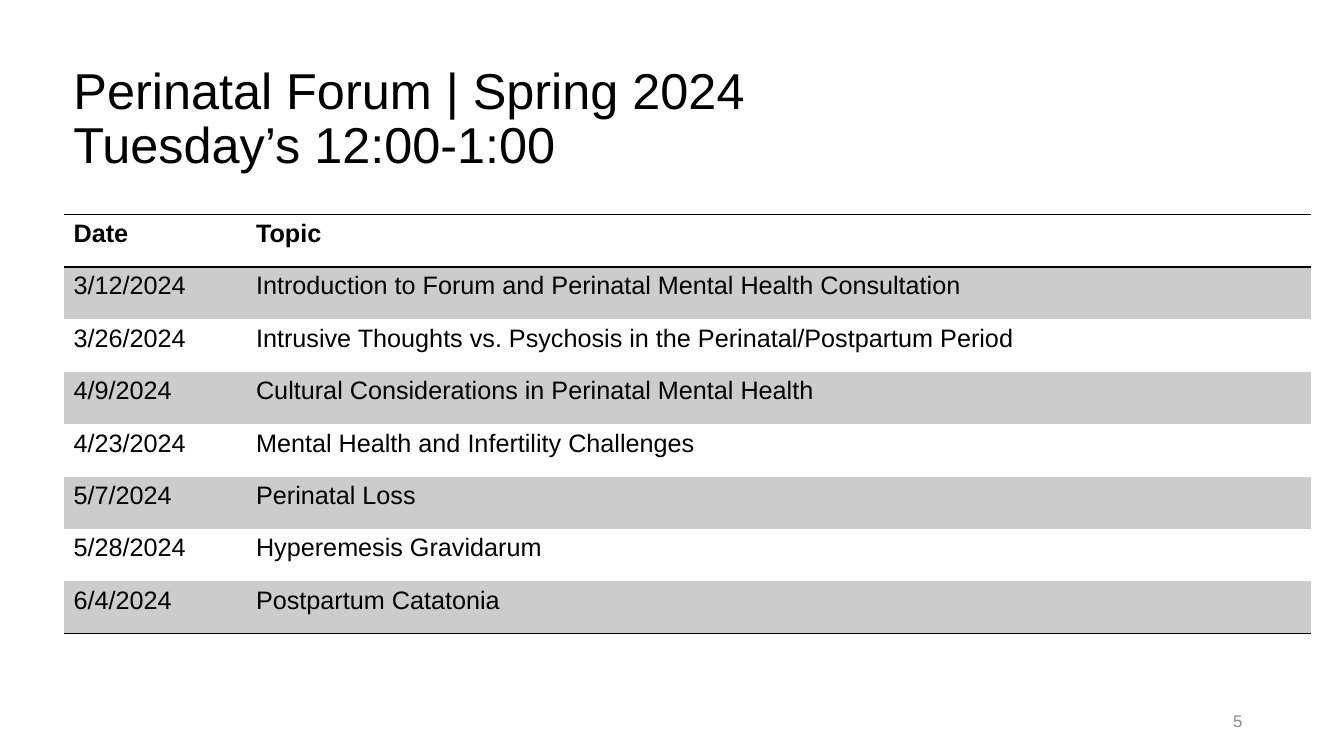
from dataclasses import dataclass

from lxml import etree
from pptx import Presentation
from pptx import util as u
from pptx.dml.color import RGBColor
from pptx.enum import text
from pptx.oxml.ns import qn

PX = 9144  # EMU in one px, 100 px to the inch
PLAIN = "{2D5ABB26-0587-4C30-8999-92F81FD0307C}"  # table style without grid


@dataclass(frozen=True)
class Theme:
    font: str = "Arial"
    ink: str = "000000"
    band: str = "CCCCCC"
    mute: str = "8C8C8C"
    title: int = 36
    body: int = 18
    note: int = 12
    rule: int = 1


class Deck:
    def __init__(self, theme, wide, high):
        self.theme = theme
        self.prs = Presentation()
        self.prs.slide_width = wide * PX
        self.prs.slide_height = high * PX
        self.slide = self.prs.slides.add_slide(self.prs.slide_layouts[6])

    def run(self, para, words, size, color, bold=False):
        run = para.add_run()
        run.text = words
        font = run.font
        font.name, font.size, font.bold = self.theme.font, u.Pt(size), bold
        font.color.rgb = RGBColor.from_string(color)

    def label(self, box, lines, size, color, align=text.PP_ALIGN.LEFT, space=1.0):
        frame = self.slide.shapes.add_textbox(*(n * PX for n in box)).text_frame
        frame.word_wrap = True
        frame.vertical_anchor = text.MSO_ANCHOR.MIDDLE
        para = frame.paragraphs[0]
        para.alignment, para.line_spacing = align, space
        for i, line in enumerate(lines):
            if i:
                para.add_line_break()
            self.run(para, line, size, color)

    def edge(self, cell, side):
        props = cell._tc.get_or_add_tcPr()
        line = etree.SubElement(props, qn(f"a:ln{side}"), w=str(u.Pt(self.theme.rule)))
        fill = etree.SubElement(line, qn("a:solidFill"))
        etree.SubElement(fill, qn("a:srgbClr"), val=self.theme.ink)

    def table(self, left, top, cols, high, rows):
        t = self.theme
        grid = self.slide.shapes.add_table(
            len(rows), len(cols), left * PX, top * PX,
            sum(cols) * PX, high * len(rows) * PX).table
        grid.first_row = grid.horz_banding = False
        grid._tbl.tblPr.find(qn("a:tableStyleId")).text = PLAIN
        for col, wide in zip(grid.columns, cols):
            col.width = wide * PX
        for r, row in enumerate(rows):
            grid.rows[r].height = high * PX
            for c, words in enumerate(row):
                cell = grid.cell(r, c)
                # Rules above and below the head, and under the last row
                if r == 0:
                    self.edge(cell, "T")
                if r in (0, len(rows) - 1):
                    self.edge(cell, "B")
                # Every second row is shaded
                if r % 2:
                    cell.fill.solid()
                    cell.fill.fore_color.rgb = RGBColor.from_string(t.band)
                else:
                    cell.fill.background()
                self.run(cell.text_frame.paragraphs[0], words, t.body, t.ink, r == 0)


TALKS = [
    ("Date", "Topic"),
    ("3/12/2024", "Introduction to Forum and Perinatal Mental Health Consultation"),
    ("3/26/2024", "Intrusive Thoughts vs. Psychosis in the Perinatal/Postpartum Period"),
    ("4/9/2024", "Cultural Considerations in Perinatal Mental Health"),
    ("4/23/2024", "Mental Health and Infertility Challenges"),
    ("5/7/2024", "Perinatal Loss"),
    ("5/28/2024", "Hyperemesis Gravidarum"),
    ("6/4/2024", "Postpartum Catatonia"),
]


def main():
    t = Theme()
    deck = Deck(t, 1333, 750)

    # Title
    deck.label((63, 48, 1208, 142),
               ["Perinatal Forum | Spring 2024", "Tuesday’s 12:00-1:00"],
               t.title, t.ink, space=0.9)

    # Schedule
    deck.table(63, 213, (181, 1056), 52, TALKS)

    # Page number
    deck.label((942, 695, 300, 40), ["5"], t.note, t.mute, text.PP_ALIGN.RIGHT)

    deck.prs.save("out.pptx")


if __name__ == "__main__":
    main()
